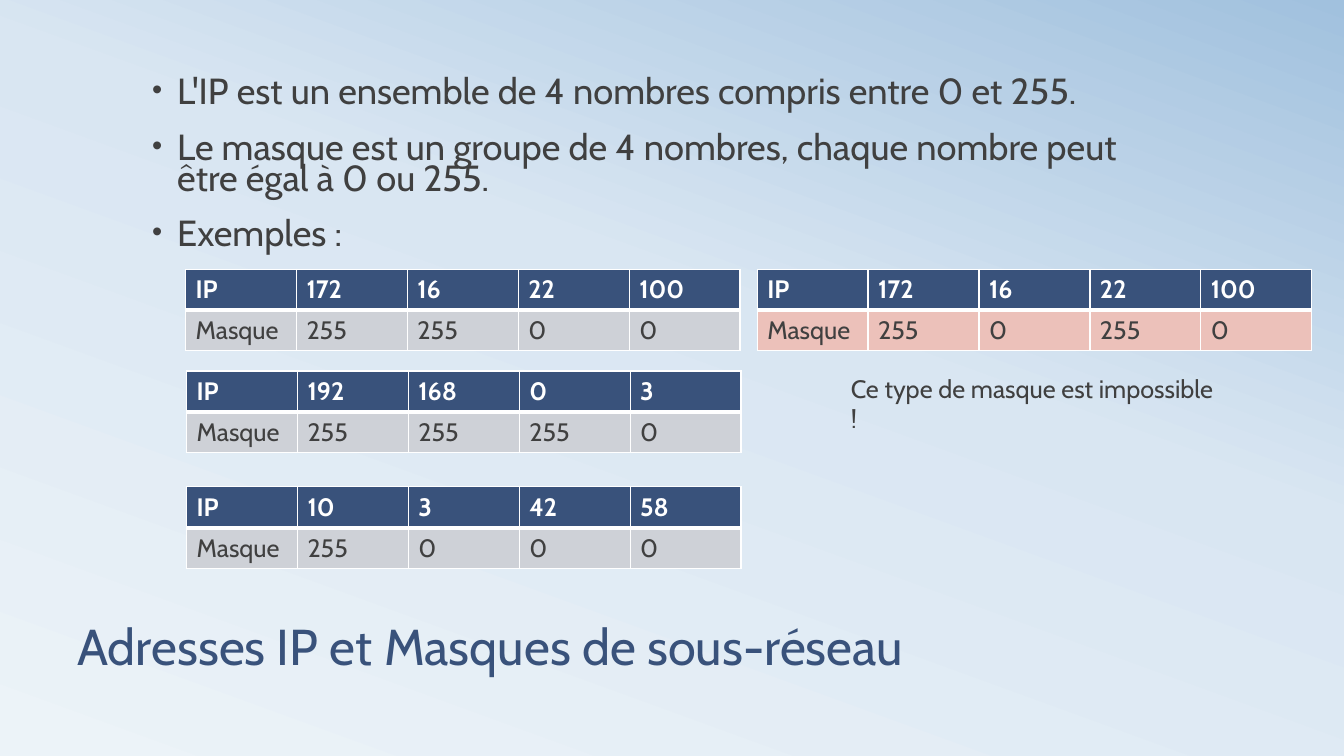
from copy import deepcopy
from lxml.etree import SubElement
from pptx import Presentation
from pptx.dml.color import RGBColor as RGB
from pptx.enum.text import MSO_ANCHOR as Anchor
from pptx.oxml import parse_xml
from pptx.oxml.ns import nsdecls, qn
from pptx.util import Inches, Pt

NAVY = RGB(0x39, 0x52, 0x7B)
DARK = RGB(0x40, 0x40, 0x40)
WHITE = RGB(0xFF, 0xFF, 0xFF)
GREY = RGB(0xCE, 0xD1, 0xD7)
PINK = RGB(0xEC, 0xC1, 0xBA)
SKY = [(0, RGB(0xEC, 0xF3, 0xF8)), (0.58, RGB(0xD9, 0xE6, 0xF2)),
       (1, RGB(0xA1, 0xC1, 0xDE))]
FONT = "Cabin"


def write(para, text, size=18, color=DARK, bold=False, lead=None, before=None):
    run = para.add_run()
    run.text = text
    run.font.name = FONT
    run.font.size = Pt(size)
    run.font.bold = bold
    run.font.color.rgb = color
    if lead:
        para.line_spacing = lead
    if before:
        para.space_before = Pt(before)


class Deck:
    def __init__(self, wide, high):
        self.prs = Presentation()
        self.prs.slide_width = Inches(wide)
        self.prs.slide_height = Inches(high)
        self.slide = self.prs.slides.add_slide(self.prs.slide_layouts[6])

    def sky(self, stops, angle):
        fill = self.slide.background.fill
        fill.gradient()
        fill.gradient_angle = angle
        group = next(self.slide.element.iter(qn("a:gsLst")))
        group.append(deepcopy(group[-1]))
        for stop, (place, color) in zip(fill.gradient_stops, stops):
            stop.position = place
            stop.color.rgb = color

    def text(self, box, lines, anchor=Anchor.TOP, bullet=False, **style):
        frame = self.slide.shapes.add_textbox(*map(Inches, box)).text_frame
        frame.word_wrap = True
        frame.vertical_anchor = anchor
        for i, line in enumerate(lines):
            para = frame.add_paragraph() if i else frame.paragraphs[0]
            write(para, line, **style)
            if bullet:
                self.bullet(para)

    def bullet(self, para):
        props = para._p.get_or_add_pPr()
        props.set("marL", str(Inches(0.25)))
        props.set("indent", str(Inches(-0.25)))
        tint = SubElement(props, qn("a:buClr"))
        SubElement(tint, qn("a:srgbClr"), val=str(DARK))
        SubElement(props, qn("a:buSzPct"), val="80000")
        SubElement(props, qn("a:buFont"), typeface="Arial")
        SubElement(props, qn("a:buChar"), char="•")

    def border(self, cell, widths):
        props = cell._tc.get_or_add_tcPr()
        for i, (side, width) in enumerate(zip("LRTB", widths)):
            props.insert(i, parse_xml(
                f'<a:ln{side} {nsdecls("a")} w="{Pt(width)}"><a:solidFill>'
                f'<a:srgbClr val="{WHITE}"/></a:solidFill></a:ln{side}>'))

    def table(self, left, top, address, mask, tint=GREY):
        rows = [["IP", *address.split(".")], ["Masque", *mask.split(".")]]
        looks = [(NAVY, WHITE, True, (1, 1, 1, 3)),
                 (tint, DARK, False, (1, 1, 3, 1))]
        size = map(Inches, (left, top, 5.5, 0.81))
        grid = self.slide.shapes.add_table(2, 5, *size).table
        for r, (row, look) in enumerate(zip(rows, looks)):
            back, color, bold, widths = look
            for c, value in enumerate(row):
                cell = grid.cell(r, c)
                cell.fill.solid()
                cell.fill.fore_color.rgb = back
                write(cell.text_frame.paragraphs[0], value,
                      color=color, bold=bold)
                self.border(cell, widths)


def main():
    deck = Deck(13.33, 7.5)
    deck.sky(SKY, 70)

    # Title and key points
    deck.text((0.67, 5.58, 12, 1.17), ["Adresses IP et Masques de sous-réseau"],
              anchor=Anchor.BOTTOM, size=36, color=NAVY, lead=0.8)
    deck.text((1.41, 0.75, 10.36, 1.87), [
        "L'IP est un ensemble de 4 nombres compris entre 0 et 255.",
        "Le masque est un groupe de 4 nombres, chaque nombre peut "
        "être égal à 0 ou 255.",
        "Exemples :",
    ], bullet=True, size=25.9, lead=0.7, before=18)

    # Valid masks
    deck.table(1.84, 2.67, "172.16.22.100", "255.255.0.0")
    deck.table(1.85, 3.68, "192.168.0.3", "255.255.255.0")
    deck.table(1.85, 4.83, "10.3.42.58", "255.0.0.0")

    # Impossible mask
    deck.table(7.51, 2.67, "172.16.22.100", "255.0.255.0", PINK)
    deck.text((8.34, 3.65, 3.83, 0.4), ["Ce type de masque est impossible !"])

    deck.prs.save("out.pptx")


if __name__ == "__main__":
    main()
